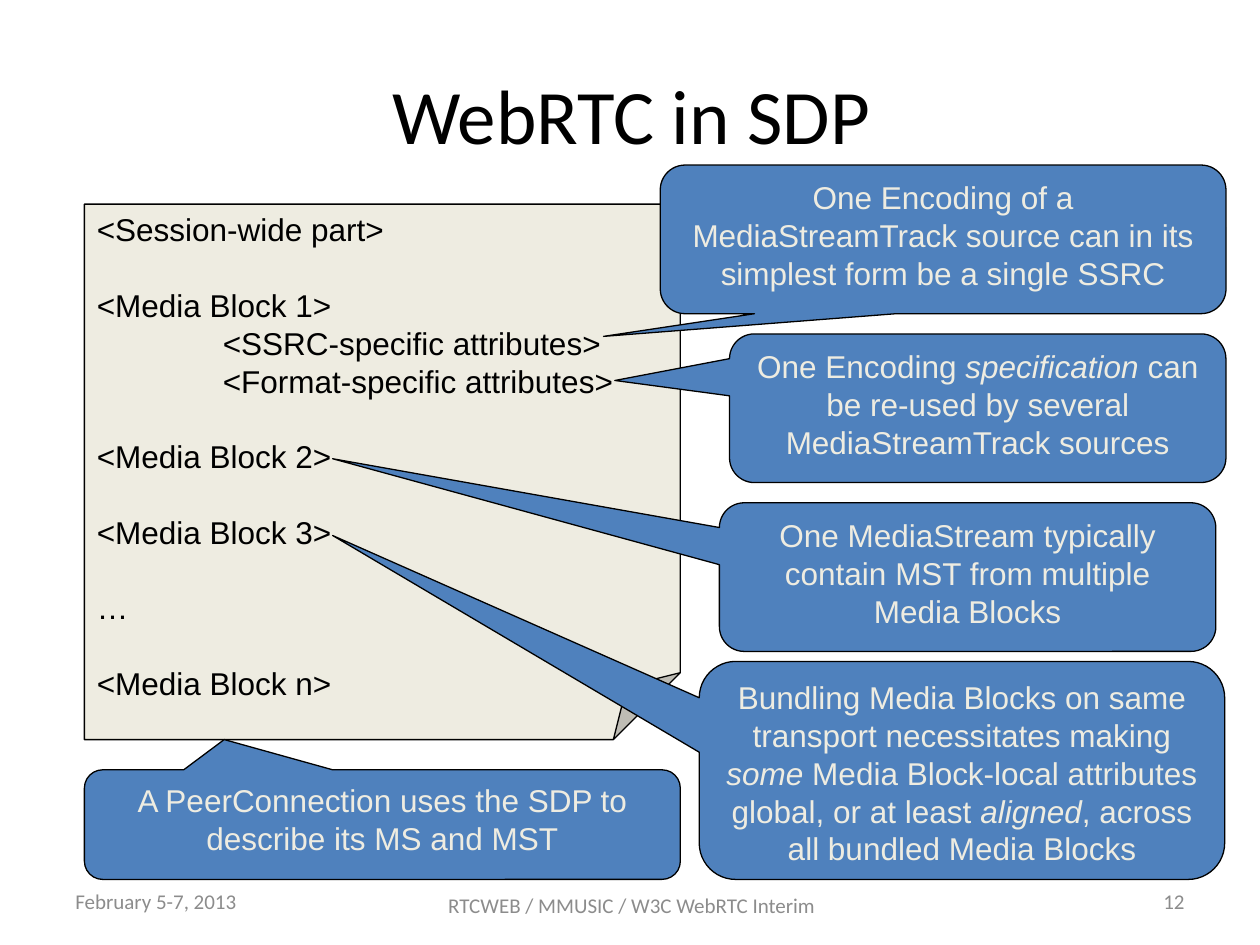
from dataclasses import dataclass

from lxml.etree import SubElement
from pptx import Presentation
from pptx.dml.color import RGBColor
from pptx.enum.shapes import MSO_SHAPE
from pptx.enum.text import MSO_ANCHOR, PP_ALIGN
from pptx.oxml.ns import qn
from pptx.util import Inches, Pt


@dataclass(frozen=True)
class Theme:
    ink: str = "000000"
    paper: str = "EEECE1"
    accent: str = "4F81BD"
    muted: str = "8C8C8C"
    heading_font: str = "Calibri"
    body_font: str = "Arial"
    title_size: float = 44
    body_size: float = 18
    footer_size: float = 12
    line_pitch: float = 21.6
    outline: float = 0.75


THEME = Theme()

# Content: boxes are left, top, width, height in inches
TITLE = ("WebRTC in SDP", (0.51, 0.28, 9, 1.25))
FOOTERS = [
    ("February 5-7, 2013", PP_ALIGN.LEFT, (0.5, 6.95, 2.33, 0.4)),
    ("RTCWEB / MMUSIC / W3C WebRTC Interim", PP_ALIGN.CENTER, (3.43, 6.98, 3.17, 0.4)),
    ("12", PP_ALIGN.RIGHT, (7.17, 6.95, 2.33, 0.4)),
]
SDP_BOX = (0.67, 1.62, 4.73, 4.25)
SDP_BLOCKS = [  # heading, indented attributes
    ("<Session-wide part>", []),
    ("<Media Block 1>", ["<SSRC-specific attributes>", "<Format-specific attributes>"]),
    ("<Media Block 2>", []),
    ("<Media Block 3>", []),
    ("…", []),
    ("<Media Block n>", []),
]
CALLOUTS = [  # text with *italics*, box, point the tail reaches
    ("One Encoding of a MediaStreamTrack source can in its simplest form be a single SSRC",
     (5.24, 1.31, 4.49, 1.18), (4.79, 2.67)),
    ("One Encoding *specification* can be re-used by several MediaStreamTrack sources",
     (5.79, 2.65, 3.94, 1.18), (4.88, 3.02)),
    ("One MediaStream typically contain MST from multiple Media Blocks",
     (5.71, 3.99, 3.94, 1.18), (2.64, 3.64)),
    ("A PeerConnection uses the SDP to describe its MS and MST",
     (0.67, 6.11, 4.73, 0.87), (1.78, 5.87)),
    ("Bundling Media Blocks on same transport necessitates making *some* Media Block-local "
     "attributes global, or at least *aligned*, across all bundled Media Blocks",
     (5.55, 5.25, 4.17, 1.73), (2.64, 4.25)),
]


def inches(box):
    return [Inches(value) for value in box]


def format_paragraph(paragraph, font, size, color, align):
    paragraph.alignment = align
    for run in paragraph.runs:
        run.font.name = font
        run.font.size = Pt(size)
        run.font.color.rgb = RGBColor.from_string(color)


def format_body(paragraph, color, align):
    format_paragraph(paragraph, THEME.body_font, THEME.body_size, color, align)
    paragraph.line_spacing = Pt(THEME.line_pitch)


def add_panel(slide, preset, box, fill):
    panel = slide.shapes.add_shape(preset, *inches(box))
    panel.shadow.inherit = False
    panel.fill.solid()
    panel.fill.fore_color.rgb = RGBColor.from_string(fill)
    panel.line.color.rgb = RGBColor.from_string(THEME.ink)
    panel.line.width = Pt(THEME.outline)
    panel.text_frame.word_wrap = True
    panel.text_frame.vertical_anchor = MSO_ANCHOR.TOP
    return panel


def add_title(slide):
    text, box = TITLE
    title = slide.shapes.title
    title.left, title.top, title.width, title.height = inches(box)
    title.text_frame.text = text
    title.text_frame.vertical_anchor = MSO_ANCHOR.MIDDLE
    format_paragraph(title.text_frame.paragraphs[0], THEME.heading_font,
                     THEME.title_size, THEME.ink, PP_ALIGN.CENTER)


def add_footer(slide, text, align, box):
    footer = slide.shapes.add_textbox(*inches(box)).text_frame
    footer.word_wrap = True
    footer.vertical_anchor = MSO_ANCHOR.MIDDLE
    footer.text = text
    format_paragraph(footer.paragraphs[0], THEME.heading_font,
                     THEME.footer_size, THEME.muted, align)


def add_sdp_sheet(slide):
    sheet = add_panel(slide, MSO_SHAPE.FOLDED_CORNER, SDP_BOX, THEME.paper)
    # The fold size has no public setter: an eighth of the shorter side
    geometry = sheet._element.spPr.find(qn("a:prstGeom"))
    SubElement(geometry.find(qn("a:avLst")), qn("a:gd"), name="adj", fmla="val 12500")
    lines = [(text, level) for heading, attributes in SDP_BLOCKS
             for text, level in [(heading, 0)] + [(name, 1) for name in attributes]]
    sheet.text_frame.text = "\n".join(text for text, _ in lines)
    for index, (paragraph, (_, level)) in enumerate(zip(sheet.text_frame.paragraphs, lines)):
        format_body(paragraph, THEME.ink, PP_ALIGN.LEFT)
        if level:
            paragraph._p.get_or_add_pPr().set("marL", str(Inches(level)))
        elif index:
            paragraph.space_before = Pt(THEME.line_pitch)


def add_callout(slide, text, box, target):
    callout = add_panel(slide, MSO_SHAPE.ROUNDED_RECTANGULAR_CALLOUT, box, THEME.accent)
    # Tail offsets are fractions of the box, measured from its centre
    left, top, width, height = box
    callout.adjustments[0] = (target[0] - left) / width - 0.5
    callout.adjustments[1] = (target[1] - top) / height - 0.5
    callout.adjustments[2] = 0.167
    paragraph = callout.text_frame.paragraphs[0]
    for index, part in enumerate(text.split("*")):
        run = paragraph.add_run()
        run.text = part
        run.font.italic = index % 2 == 1
    format_body(paragraph, THEME.paper, PP_ALIGN.CENTER)


def main():
    deck = Presentation()
    deck.slide_width, deck.slide_height = Inches(10), Inches(7.5)
    slide = deck.slides.add_slide(deck.slide_layouts[5])
    for footer in FOOTERS:
        add_footer(slide, *footer)
    add_title(slide)
    add_sdp_sheet(slide)
    for callout in CALLOUTS:
        add_callout(slide, *callout)
    deck.save("out.pptx")


if __name__ == "__main__":
    main()
